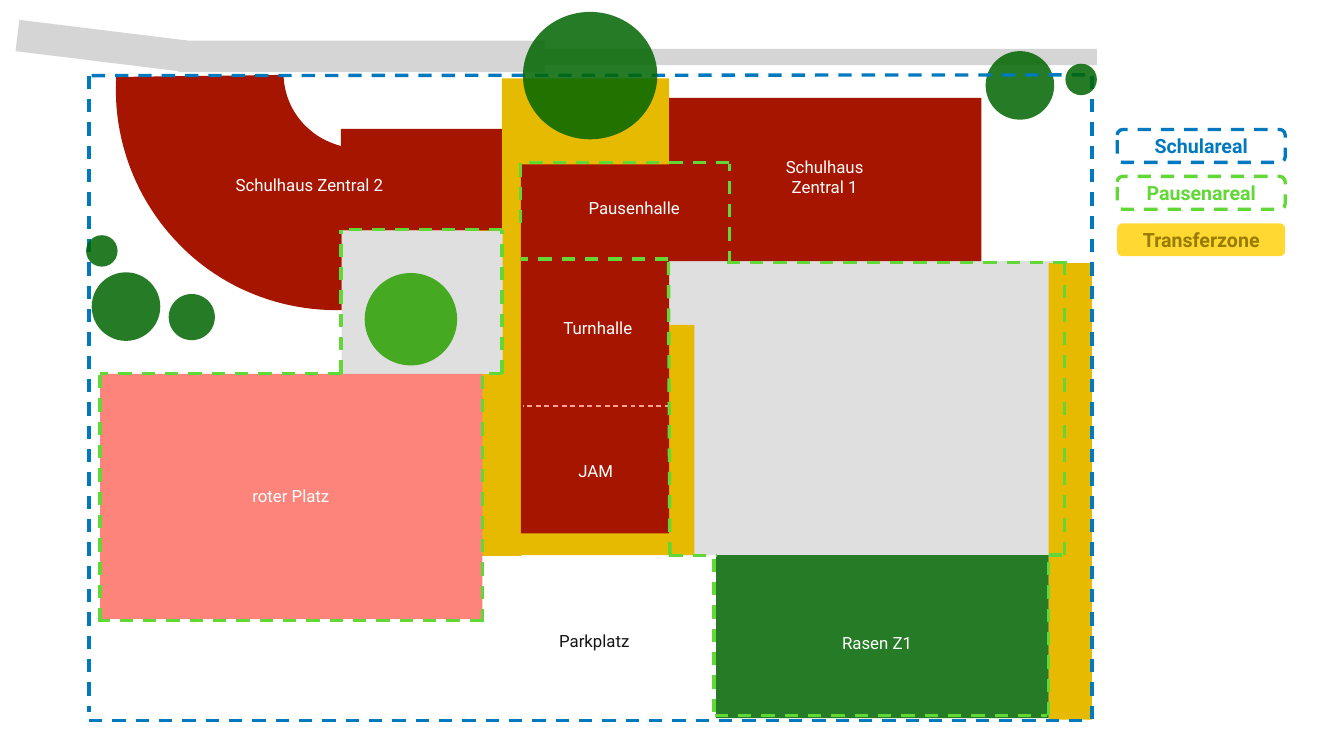
from lxml import etree
from pptx import Presentation
from pptx.dml.color import RGBColor
from pptx.enum.dml import MSO_LINE
from pptx.enum.shapes import MSO_CONNECTOR, MSO_SHAPE
from pptx.enum.text import MSO_ANCHOR, PP_ALIGN
from pptx.oxml.ns import qn
from pptx.util import Pt

FONT = "Roboto"
BLUE, LIME, WHITE, BLACK = "0079BF", "61D836", "FFFFFF", "151515"
GREY, ROAD, YELLOW, BRICK = "DFDFDF", "D5D5D5", "E5BA00", "A61500"
SALMON, ROSE, TREE, BUSH = "FD847B", "FFA295", "006600", "45AA21"
RECT, OVAL, ROUND = MSO_SHAPE.RECTANGLE, MSO_SHAPE.OVAL, MSO_SHAPE.ROUNDED_RECTANGLE
OUTLINE_WIDTH = 4.75


def color(value):
    """Turn a hex string into a colour."""
    return RGBColor.from_string(value)


def paint(shape, fill, opacity=100):
    """Give a shape a flat fill without line or shadow."""
    shape.shadow.inherit = False
    shape.line.fill.background()
    shape.fill.solid()
    shape.fill.fore_color.rgb = color(fill)
    if opacity < 100:
        value = shape.fill._xPr.find(".//" + qn("a:srgbClr"))
        etree.SubElement(value, qn("a:alpha")).set("val", str(opacity * 1000))


def add_area(slide, box, place, fill, kind=RECT, opacity=100):
    """Add a filled shape, placed relative to the box."""
    left, top, width, height = place
    shape = slide.shapes.add_shape(
        kind, Pt(box[0] + left), Pt(box[1] + top), Pt(width), Pt(height))
    paint(shape, fill, opacity)
    return shape


def add_tree(slide, box, left, top, width, height=None):
    """Add a translucent tree crown."""
    add_area(slide, box, (left, top, width, height or width), TREE, OVAL, 85)


def add_dashes(slide, box, ends, stroke, width=OUTLINE_WIDTH):
    """Add a dashed line between two points of the box."""
    x1, y1, x2, y2 = ends
    line = slide.shapes.add_connector(
        MSO_CONNECTOR.STRAIGHT, Pt(box[0] + x1), Pt(box[1] + y1),
        Pt(box[0] + x2), Pt(box[1] + y2))
    line.line.color.rgb = color(stroke)
    line.line.width = Pt(width)
    line.line.dash_style = MSO_LINE.DASH
    etree.SubElement(line._element.spPr, qn("a:effectLst"))


def write(shape, text, size, ink, bold=False):
    """Write centred text into a shape."""
    frame = shape.text_frame
    frame.word_wrap = True
    frame.vertical_anchor = MSO_ANCHOR.MIDDLE
    frame.margin_left = frame.margin_right = Pt(4)
    frame.margin_top = frame.margin_bottom = Pt(4)
    paragraph = frame.paragraphs[0]
    paragraph.alignment = PP_ALIGN.CENTER
    run = paragraph.add_run()
    run.text = text
    run.font.name, run.font.size, run.font.bold = FONT, Pt(size), bold
    run.font.color.rgb = color(ink)


def bezier(points, steps=24):
    """Sample a cubic curve, leaving out its first point."""
    curve = []
    for step in range(1, steps + 1):
        t = step / steps
        weights = ((1 - t) ** 3, 3 * t * (1 - t) ** 2, 3 * t * t * (1 - t), t ** 3)
        curve.append(tuple(sum(w * p[axis] for w, p in zip(weights, points))
                           for axis in (0, 1)))
    return curve


def draw_grounds(slide, box):
    """Draw yards, transfer zones, lawn and red court."""
    for place, fill in [
        ((955, 373, 567, 420), GREY),
        ((737, 464, 255, 329), YELLOW),
        ((1498, 376, 62, 652), YELLOW),
        ((685, 326, 60, 468), YELLOW),
        ((488, 330, 230, 204), GREY),
        ((717, 112, 239, 221), YELLOW),
        ((143, 534, 546, 350), SALMON),
    ]:
        add_area(slide, box, place, fill)
    add_area(slide, box, (521, 390, 132, 132), BUSH, OVAL)
    add_area(slide, box, (1023, 793, 475, 233), TREE, opacity=85)


def draw_buildings(slide, box):
    """Draw the school houses, halls and the curved wing."""
    outline = [(166, 110)]
    outline += bezier([(166, 110), (161, 199), (194, 287), (258, 351)])
    outline += bezier([(258, 351), (318, 412), (402, 445), (488, 443)])
    outline += [(488, 209)]
    outline += bezier([(488, 209), (471, 204), (455, 197), (441, 184)])
    outline += bezier([(441, 184), (419, 165), (406, 137), (405, 107)])
    points = [(Pt(box[0] + x), Pt(box[1] + y)) for x, y in outline]
    builder = slide.shapes.build_freeform(*points[0], scale=1.0)
    builder.add_line_segments(points[1:], close=True)
    paint(builder.convert_to_shape(), BRICK)
    for place in [(487, 184, 230, 145), (744, 235, 212, 527), (956, 140, 446, 233)]:
        add_area(slide, box, place, BRICK)
    add_dashes(slide, box, (957, 580, 747, 580), ROSE, 1.75)


def draw_surroundings(slide, box):
    """Draw the road, the trees and the blue school boundary."""
    add_area(slide, box, (255, 58, 523, 45), ROAD)
    add_area(slide, box, (24, 43, 242, 45), ROAD).rotation = 7
    add_area(slide, box, (770, 70, 797, 23), ROAD)
    for tree in [(241, 420, 66), (131, 389, 98), (1408, 73, 98)]:
        add_tree(slide, box, *tree)
    for ends in [(1560, 1027, 1560, 108), (131, 108, 1560, 107),
                 (127, 1029, 1560, 1029), (127, 108, 127, 1017)]:
        add_dashes(slide, box, ends, BLUE)
    for tree in [(123, 336, 45), (747, 17, 192, 182), (1522, 91, 45)]:
        add_tree(slide, box, *tree)


def draw_break_areas(slide, box):
    """Draw the green outlines of the break areas."""
    west = [(717, 534, 717, 328), (717, 534, 690, 534), (717, 328, 488, 328),
            (488, 534, 143, 534), (143, 888, 143, 532), (689, 889, 689, 534),
            (487, 534, 487, 329), (690, 886, 143, 886)]
    hall = [(744, 319, 744, 232), (1042, 377, 1042, 235),
            (955, 370, 744, 370), (1042, 232, 745, 232)]
    east = [(957, 793, 955, 374), (1521, 793, 1521, 369), (1524, 375, 1034, 375),
            (1498, 793, 1522, 793), (956, 794, 1023, 794)]
    lawn = [(1021, 1022, 1496, 1022), (1498, 1022, 1498, 793), (1020, 1017, 1020, 788)]
    for ends in west + hall + east + lawn:
        add_dashes(slide, box, ends, LIME)


def draw_labels(slide, box):
    """Name the places on the plan."""
    for text, left, top, width, height, ink in [
        ("Schulhaus Zentral 2", 256, 246, 372, 37, WHITE),
        ("Schulhaus Zentral 1", 1094, 220, 168, 66, WHITE),
        ("Pausenhalle", 822, 279, 168, 37, WHITE),
        ("Turnhalle", 770, 450, 168, 37, WHITE),
        ("JAM", 767, 654, 168, 37, WHITE),
        ("roter Platz", 316, 690, 199, 37, WHITE),
        ("Rasen Z1", 1169, 900, 168, 37, WHITE),
        ("Parkplatz", 765, 897, 168, 37, BLACK),
    ]:
        label = slide.shapes.add_textbox(
            Pt(box[0] + left), Pt(box[1] + top), Pt(width), Pt(height))
        write(label, text, 24, ink)


def draw_legend(slide, box):
    """Stack the legend keys at an equal pitch."""
    keys = [("Schulareal", BLUE, None), ("Pausenareal", LIME, None),
            ("Transferzone", "987C00", "FFD932")]
    for row, (text, ink, fill) in enumerate(keys):
        key = add_area(slide, box, (0, row * 67, 240, 47), fill or WHITE, ROUND)
        if not fill:
            key.fill.background()
            key.line.color.rgb = color(ink)
            key.line.width = Pt(OUTLINE_WIDTH)
            key.line.dash_style = MSO_LINE.DASH
        write(key, text, 28, ink, bold=True)


def main():
    """Build the site plan slide and save it."""
    presentation = Presentation()
    presentation.slide_width, presentation.slide_height = Pt(1920), Pt(1080)
    slide = presentation.slides.add_slide(presentation.slide_layouts[6])
    plan = (0, 0)
    for draw in (draw_grounds, draw_buildings, draw_surroundings,
                 draw_break_areas, draw_labels):
        draw(slide, plan)
    draw_legend(slide, (1596, 185))
    presentation.save("out.pptx")


if __name__ == "__main__":
    main()
